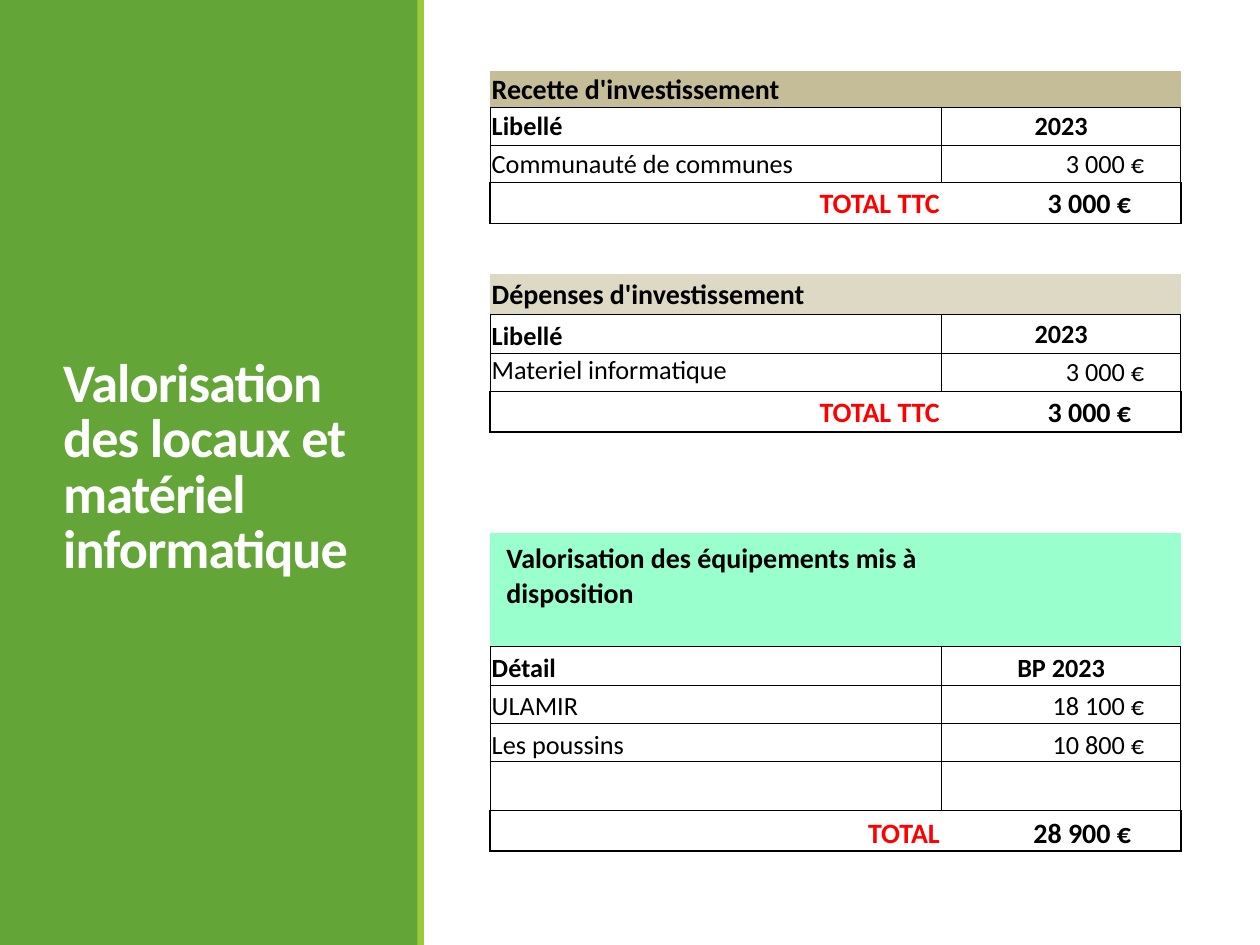
from lxml import etree
from pptx import Presentation
from pptx.dml.color import RGBColor
from pptx.enum.shapes import MSO_SHAPE
from pptx.enum.text import MSO_ANCHOR, PP_ALIGN
from pptx.oxml.ns import qn
from pptx.util import Pt

RECT = MSO_SHAPE.RECTANGLE
TOP, MIDDLE, BOTTOM = MSO_ANCHOR.TOP, MSO_ANCHOR.MIDDLE, MSO_ANCHOR.BOTTOM
LEFT, CENTER, RIGHT = PP_ALIGN.LEFT, PP_ALIGN.CENTER, PP_ALIGN.RIGHT

GREEN, LIME, WHITE, BLACK, RED = "63A537", "99CB38", "FFFFFF", "000000", "FF0000"
TIGHT = {"margin_left": 1, "margin_right": 1, "margin_top": 1, "margin_bottom": 0}
LOOSE = {"margin_left": 9.4, "margin_right": 9.4, "margin_top": 5, "margin_bottom": 5}

BORDERS = {
    "title": [{"B": 0.5}, {"B": 0.5}],
    "head": [dict.fromkeys("LRTB", 0.5)] * 2,
    "item": [dict.fromkeys("LRTB", 0.5)] * 2,
    "total": [{"L": 1, "T": 0.5, "B": 1}, {"T": 0.5, "R": 1, "B": 1}],
    "after": [{"T": 1}, {"T": 1}],
    "gap": [{}, {}],
}
FORMATS = {
    "title": [{"size": 16, "bold": True}] * 2,
    "head": [{"size": 15, "bold": True}, {"size": 15, "bold": True, "align": CENTER}],
    "item": [{"size": 15}, {"size": 15, "align": RIGHT, "indent": 21}],
    "total": [
        {"size": 16, "bold": True, "color": RED, "align": RIGHT},
        {"size": 16, "bold": True, "align": RIGHT, "indent": 28.5},
    ],
}

ROWS = [
    ("title", 20.6, "Recette d'investissement", "", MIDDLE, MIDDLE, "C4BD97"),
    ("head", 21.6, "Libellé", "2023", MIDDLE, MIDDLE, None),
    ("item", 21.6, "Communauté de communes", "3 000 €", MIDDLE, MIDDLE, None),
    ("total", 23.3, "TOTAL TTC", "3 000 €", MIDDLE, MIDDLE, None),
    ("after", 29, "", "", TOP, TOP, None),
    ("title", 23, "Dépenses d'investissement", "", MIDDLE, MIDDLE, "DDD9C4"),
    ("head", 22, "Libellé", "2023", BOTTOM, MIDDLE, None),
    ("item", 21.8, "Materiel informatique", "3 000 €", TOP, MIDDLE, None),
    ("total", 23.3, "TOTAL TTC", "3 000 €", MIDDLE, MIDDLE, None),
    ("after", 29, "", "", TOP, TOP, None),
    ("gap", 29, "", "", TOP, TOP, None),
    ("title", 64.6, "Valorisation des équipements mis à disposition", "", TOP, TOP, "99FFCC"),
    ("head", 22, "Détail", "BP 2023", BOTTOM, BOTTOM, None),
    ("item", 21.8, "ULAMIR", "18 100 €", BOTTOM, BOTTOM, None),
    ("item", 21.8, "Les poussins", "10 800 €", BOTTOM, BOTTOM, None),
    ("item", 28, "", "", BOTTOM, BOTTOM, None),
    ("total", 23.3, "TOTAL", "28 900 €", BOTTOM, BOTTOM, None),
]


def rgb(color):
    return RGBColor.from_string(color)


def apply(target, values):
    for name, value in values.items():
        setattr(target, name, value)


class Deck:
    font = "Calibri"

    def __init__(self, width, height):
        self.prs = Presentation()
        apply(self.prs, {"slide_width": Pt(width), "slide_height": Pt(height)})
        self.s = self.prs.slides.add_slide(self.prs.slide_layouts[6])

    def rect(self, x, y, w, h, color):
        sp = self.s.shapes.add_shape(RECT, Pt(x), Pt(y), Pt(w), Pt(h))
        sp.shadow.inherit = False
        sp.fill.solid()
        sp.fill.fore_color.rgb = rgb(color)
        sp.line.fill.background()

    def text(self, tf, text, size=15, bold=False, color=BLACK, align=LEFT):
        p = tf.paragraphs[0]
        p.alignment = align
        if not text:
            p.font.size = Pt(size)
            return p
        r = p.add_run()
        r.text = text
        apply(r.font, {"name": self.font, "size": Pt(size), "bold": bold})
        r.font.color.rgb = rgb(color)
        return p

    def title(self, x, y, w, h, text):
        tf = self.s.shapes.add_textbox(Pt(x), Pt(y), Pt(w), Pt(h)).text_frame
        apply(tf, {"word_wrap": True, "vertical_anchor": MIDDLE})
        p = self.text(tf, text, 31, True, WHITE)
        apply(p, {"line_spacing": 0.85, "space_after": Pt(6)})
        p.runs[0]._r.get_or_add_rPr().set("spc", "-50")

    def borders(self, cell, widths):
        tc_pr = cell._tc.get_or_add_tcPr()
        for i, side in enumerate("LRTB"):
            ln = etree.Element(qn(f"a:ln{side}"))
            if side in widths:
                ln.set("w", str(Pt(widths[side])))
                fill = etree.SubElement(ln, qn("a:solidFill"))
                etree.SubElement(fill, qn("a:srgbClr"), val=BLACK)
            else:
                etree.SubElement(ln, qn("a:noFill"))
            tc_pr.insert(i, ln)

    def cell(self, cell, text, anchor, fill, margins, widths, indent=1, **style):
        if text:
            margins = {**margins, "margin_right": max(indent, margins["margin_right"])}
        apply(cell, {name: Pt(value) for name, value in margins.items()})
        cell.vertical_anchor = anchor
        if fill:
            cell.fill.solid()
            cell.fill.fore_color.rgb = rgb(fill)
        else:
            cell.fill.background()
        self.text(cell.text_frame, text, **style)
        self.borders(cell, widths)

    def table(self, x, y, columns, rows):
        height = sum(row[1] for row in rows)
        frame = self.s.shapes.add_table(
            len(rows), len(columns), Pt(x), Pt(y), Pt(sum(columns)), Pt(height)
        )
        table = frame.table
        apply(table, {"first_row": False, "horz_banding": False})
        for column, width in zip(table.columns, columns):
            column.width = Pt(width)
        for i, (kind, h, label, amount, *anchors, fill) in enumerate(rows):
            table.rows[i].height = Pt(h)
            margins = LOOSE if kind == "title" and anchors[0] == TOP else TIGHT
            formats = FORMATS.get(kind, [{}, {}])
            for j, text in enumerate((label, amount)):
                self.cell(table.cell(i, j), text, anchors[j], fill, margins,
                          BORDERS[kind][j], **formats[j])


def main():
    deck = Deck(720, 540)
    deck.rect(0, 0, 239, 540, GREEN)
    deck.title(29, 41, 182, 454, "Valorisation des locaux et matériel informatique")
    deck.rect(238.5, 0, 3.8, 540, LIME)
    deck.table(280, 40.7, [258, 136.8], ROWS)
    deck.prs.save("out.pptx")


if __name__ == "__main__":
    main()
